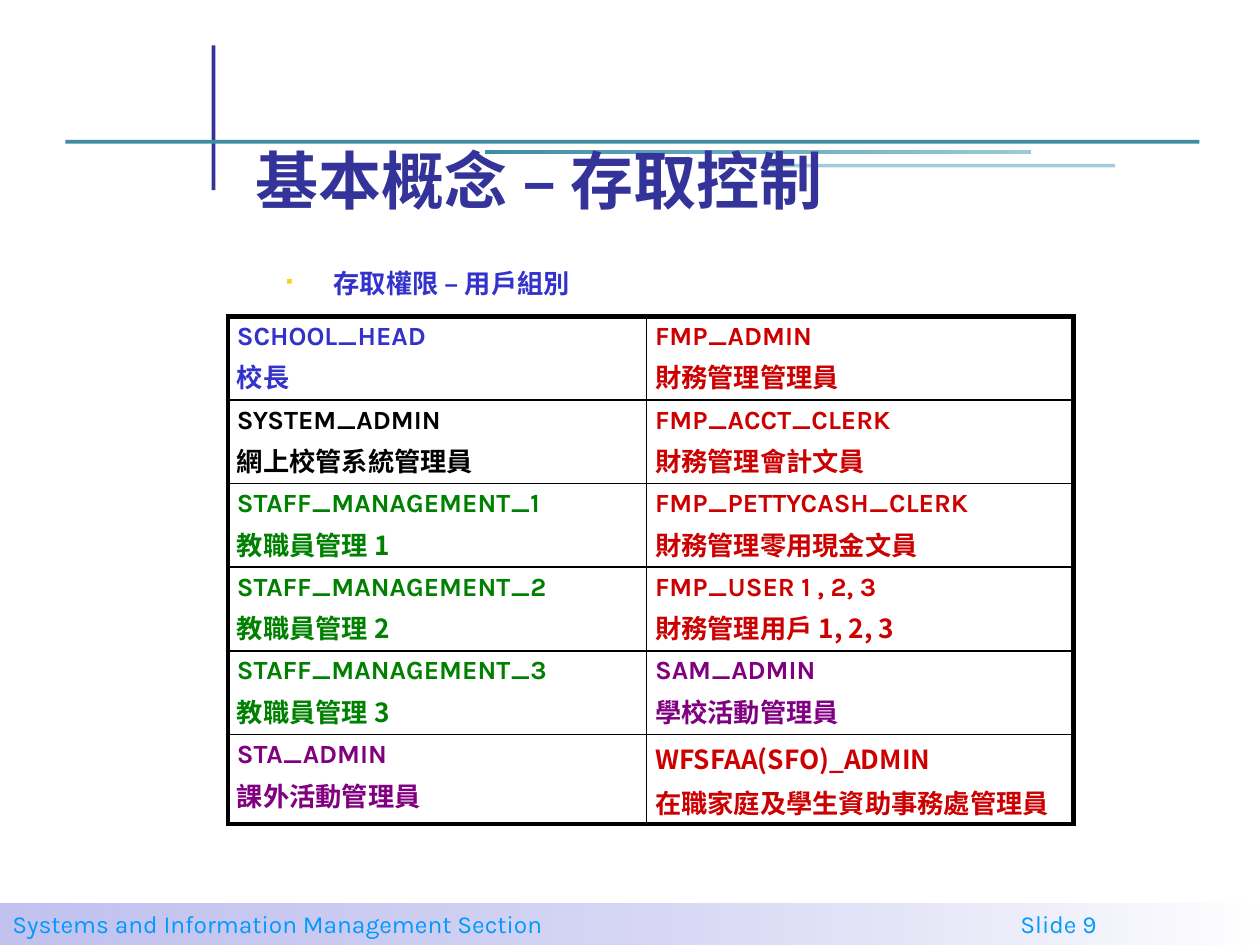
from dataclasses import dataclass
from typing import Optional

from lxml import etree
from pptx import Presentation
from pptx.dml.color import RGBColor
from pptx.enum.shapes import MSO_SHAPE
from pptx.enum.text import MSO_ANCHOR, MSO_AUTO_SIZE, PP_ALIGN
from pptx.oxml.ns import qn
from pptx.util import Inches, Pt

RECTANGLE = MSO_SHAPE.RECTANGLE
LEFT = PP_ALIGN.LEFT
BOTTOM, MIDDLE = MSO_ANCHOR.BOTTOM, MSO_ANCHOR.MIDDLE
NO_AUTOFIT = MSO_AUTO_SIZE.NONE
TITLE_ONLY = 5

LATIN_FONT = "Karla"
CHINESE_FONT = "Noto Sans CJK SC"
BULLET_FONT = "Wingdings"
SQUARE_BULLET = "§"  # a small square in the bullet font

NAVY = RGBColor(0x33, 0x33, 0x99)
BLUE = RGBColor(0x33, 0x33, 0xCC)
TEAL = RGBColor(0x3F, 0x8D, 0xA5)
LIGHT_TEAL = RGBColor(0x9B, 0xCA, 0xD9)
PALE_TEAL = RGBColor(0xA1, 0xCD, 0xDB)
SKY = RGBColor(0x00, 0x99, 0xFF)
GOLD = RGBColor(0xFF, 0xCF, 0x01)
WHITE = RGBColor(0xFF, 0xFF, 0xFF)
BLACK = RGBColor(0x00, 0x00, 0x00)
RED = RGBColor(0xCC, 0x00, 0x00)
GREEN = RGBColor(0x00, 0x80, 0x00)
PURPLE = RGBColor(0x80, 0x00, 0x80)


@dataclass
class Bar:
    left: float
    top: float
    width: float
    height: float
    color: RGBColor
    end_color: Optional[RGBColor] = None


@dataclass
class UserGroup:
    code: str
    label: str
    color: RGBColor
    code_font: str = LATIN_FONT


RULES = [
    Bar(1.68, 0.36, 0.03, 1.15, NAVY),
    Bar(0.52, 1.11, 9, 0.03, TEAL),
    Bar(3.85, 1.19, 4.33, 0.03, TEAL, LIGHT_TEAL),
    Bar(6.09, 1.3, 2.76, 0.03, PALE_TEAL),
]
FOOTER = Bar(0, 7.17, 10, 0.33, BLUE, WHITE)
FOOTER_OPACITY = (30, 50)

GROUP_ROWS = [
    (UserGroup("SCHOOL_HEAD", "校長", BLUE),
     UserGroup("FMP_ADMIN", "財務管理管理員", RED)),
    (UserGroup("SYSTEM_ADMIN", "網上校管系統管理員", BLACK),
     UserGroup("FMP_ACCT_CLERK", "財務管理會計文員", RED)),
    (UserGroup("STAFF_MANAGEMENT_1", "教職員管理 1", GREEN),
     UserGroup("FMP_PETTYCASH_CLERK", "財務管理零用現金文員", RED)),
    (UserGroup("STAFF_MANAGEMENT_2", "教職員管理 2", GREEN),
     UserGroup("FMP_USER 1 , 2, 3", "財務管理用戶 1, 2, 3", RED)),
    (UserGroup("STAFF_MANAGEMENT_3", "教職員管理 3", GREEN),
     UserGroup("SAM_ADMIN", "學校活動管理員", PURPLE)),
    (UserGroup("STA_ADMIN", "課外活動管理員", PURPLE),
     UserGroup("WFSFAA(SFO)_ADMIN", "在職家庭及學生資助事務處管理員", RED, CHINESE_FONT)),
]
COLUMN_WIDTHS = (3.32, 3.39)
# Five equal rows share 3.32 inches; the last one is taller
ROW_HEIGHTS = [3.32 / 5] * 5 + [0.71]


def add_run(paragraph, text: str, font_name: str, size: float,
            color: RGBColor, bold: bool = True) -> None:
    run = paragraph.add_run()
    run.text = text
    run.font.name = font_name
    run.font.size = Pt(size)
    run.font.bold = bold
    run.font.color.rgb = color
    east_asian = etree.SubElement(run.font._element, qn("a:ea"))
    east_asian.set("typeface", CHINESE_FONT)


def add_bar(slide, bar: Bar):
    shape = slide.shapes.add_shape(RECTANGLE, Inches(bar.left), Inches(bar.top),
                                   Inches(bar.width), Inches(bar.height))
    shape.shadow.inherit = False
    shape.line.fill.background()
    if bar.end_color is None:
        shape.fill.solid()
        shape.fill.fore_color.rgb = bar.color
    else:
        shape.fill.gradient()
        shape.fill.gradient_angle = 0
        for stop, color in zip(shape.fill.gradient_stops, (bar.color, bar.end_color)):
            stop.color.rgb = color
    return shape


def add_footer(slide) -> None:
    shape = add_bar(slide, FOOTER)
    for color, opacity in zip(shape.element.iter(qn("a:srgbClr")), FOOTER_OPACITY):
        etree.SubElement(color, qn("a:alpha")).set("val", str(opacity * 1000))
    frame = shape.text_frame
    frame.vertical_anchor = MIDDLE
    frame.margin_top = frame.margin_bottom = 0
    paragraph = frame.paragraphs[0]
    paragraph.alignment = LEFT
    # The slide number starts at a tab stop
    tabs = etree.SubElement(paragraph._p.get_or_add_pPr(), qn("a:tabLst"))
    etree.SubElement(tabs, qn("a:tab"), pos=str(Inches(8)), algn="l")
    add_run(paragraph, "Systems and Information Management Section\tSlide 9",
            LATIN_FONT, 14, SKY, bold=False)


def format_title(slide) -> None:
    title = slide.shapes.title
    title.left, title.top = Inches(1.93), Inches(1.1)
    title.width, title.height = Inches(7.83), Inches(0.62)
    frame = title.text_frame
    frame.word_wrap = True
    frame.auto_size = NO_AUTOFIT
    frame.vertical_anchor = BOTTOM
    frame.margin_top = frame.margin_bottom = 0
    paragraph = frame.paragraphs[0]
    paragraph.alignment = LEFT
    add_run(paragraph, "基本概念 – 存取控制", CHINESE_FONT, 36, NAVY)
    # Bring the title in front of the rules
    title.element.getparent().append(title.element)


def add_subtitle(slide) -> None:
    box = slide.shapes.add_textbox(Inches(2.17), Inches(2.1), Inches(3.12), Inches(0.3))
    box.text_frame.word_wrap = True
    paragraph = box.text_frame.paragraphs[0]
    paragraph.line_spacing = 0.9
    properties = paragraph._p.get_or_add_pPr()
    properties.set("marL", str(Inches(0.38)))
    properties.set("indent", str(-Inches(0.38)))
    bullet_color = etree.SubElement(properties, qn("a:buClr"))
    etree.SubElement(bullet_color, qn("a:srgbClr"), val=str(GOLD))
    etree.SubElement(properties, qn("a:buSzPct"), val="60000")
    etree.SubElement(properties, qn("a:buFont"), typeface=BULLET_FONT, charset="2")
    etree.SubElement(properties, qn("a:buChar"), char=SQUARE_BULLET)
    add_run(paragraph, "存取權限 – 用戶組別", CHINESE_FONT, 15, BLUE)


def set_border(cell, side: str, width: float) -> None:
    line = etree.SubElement(cell._tc.get_or_add_tcPr(), qn(f"a:ln{side}"), w=str(Pt(width)))
    fill = etree.SubElement(line, qn("a:solidFill"))
    etree.SubElement(fill, qn("a:srgbClr"), val=str(BLACK))


def fill_cell(cell, group: UserGroup) -> None:
    cell.margin_left = cell.margin_right = Inches(0.07)
    cell.margin_top = cell.margin_bottom = Inches(0.04)
    code_paragraph = cell.text_frame.paragraphs[0]
    add_run(code_paragraph, group.code, group.code_font, 15, group.color)
    label_paragraph = cell.text_frame.add_paragraph()
    label_paragraph.space_before = Pt(3)
    add_run(label_paragraph, group.label, CHINESE_FONT, 15, group.color)


def add_group_table(slide) -> None:
    row_count, column_count = len(GROUP_ROWS), len(COLUMN_WIDTHS)
    table = slide.shapes.add_table(
        row_count, column_count, Inches(1.81), Inches(2.51),
        Inches(sum(COLUMN_WIDTHS)), Inches(sum(ROW_HEIGHTS))).table
    table.first_row = table.horz_banding = False
    for column, width in zip(table.columns, COLUMN_WIDTHS):
        column.width = Inches(width)
    for row, height in zip(table.rows, ROW_HEIGHTS):
        row.height = Inches(height)
    for row_index, groups in enumerate(GROUP_ROWS):
        for column_index, group in enumerate(groups):
            cell = table.cell(row_index, column_index)
            fill_cell(cell, group)
            # Thick frame outside, thin lines inside
            outer_sides = {"L": column_index == 0, "R": column_index == column_count - 1,
                           "T": row_index == 0, "B": row_index == row_count - 1}
            for side, is_outer in outer_sides.items():
                set_border(cell, side, 3 if is_outer else 1)
            cell.fill.background()


def main() -> None:
    presentation = Presentation()
    presentation.slide_width, presentation.slide_height = Inches(10), Inches(7.5)
    slide = presentation.slides.add_slide(presentation.slide_layouts[TITLE_ONLY])
    for rule in RULES:
        add_bar(slide, rule)
    add_footer(slide)
    format_title(slide)
    add_subtitle(slide)
    add_group_table(slide)
    presentation.save("out.pptx")


if __name__ == "__main__":
    main()
